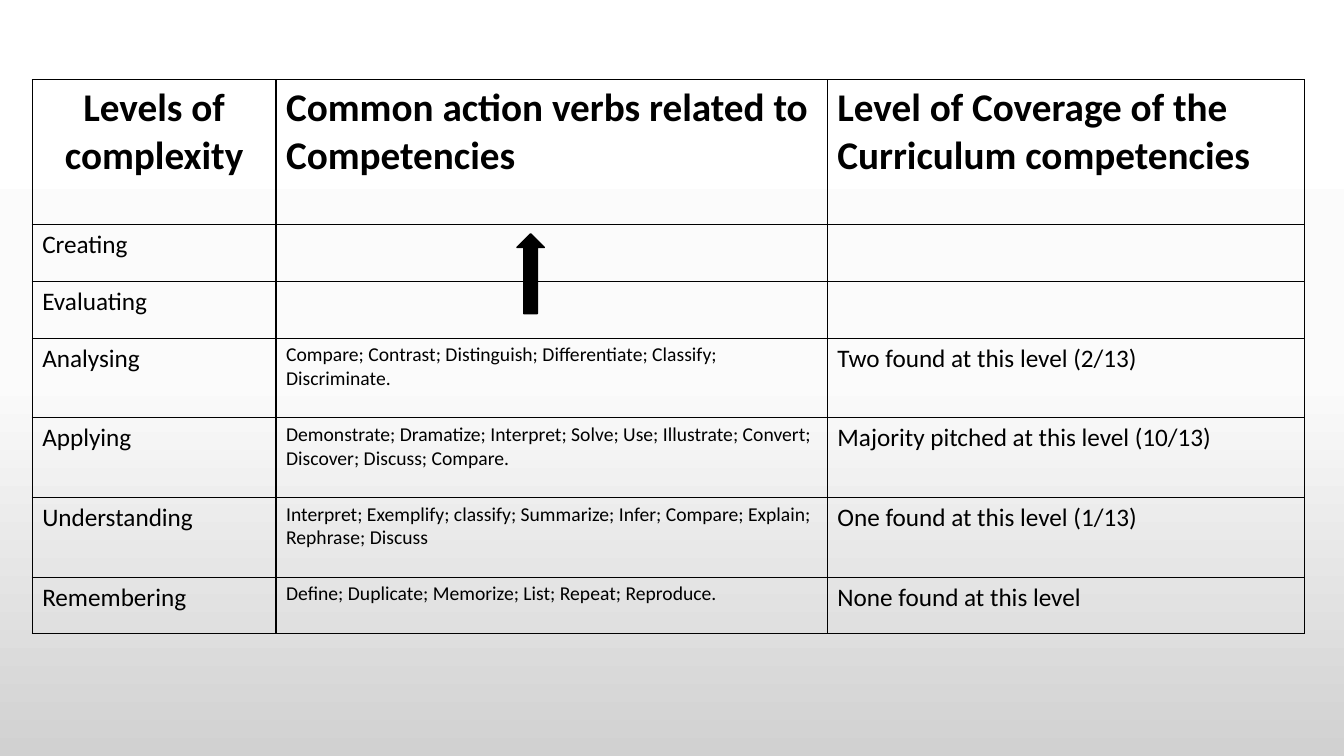
"""Builds the slide on levels of complexity and curriculum coverage."""
from copy import deepcopy
from lxml import etree
from pptx import Presentation
from pptx.dml.color import RGBColor
from pptx.enum import shapes, text
from pptx.oxml import ns
from pptx.util import Pt

BLACK = RGBColor(0, 0, 0)
WHITE = RGBColor(255, 255, 255)
PALE = RGBColor(0xFB, 0xFB, 0xFB)
GREY = RGBColor(0xD1, 0xD1, 0xD1)

WIDTHS = [174.2, 393.8, 340.6]
HEIGHTS = [103.7, 40.5, 40.5, 56.9, 56.9, 56.9, 40.5]
SIZES = [18, 14, 18]
ROWS = [
    ("Levels of complexity",
     "Common action verbs related to Competencies",
     "Level of Coverage of the Curriculum competencies"),
    ("Creating", "", ""),
    ("Evaluating", "", ""),
    ("Analysing",
     "Compare; Contrast; Distinguish; Differentiate; Classify; Discriminate.",
     "Two found at this level (2/13)"),
    ("Applying",
     "Demonstrate; Dramatize; Interpret; Solve; Use; Illustrate; Convert; Discover; Discuss; Compare.",
     "Majority pitched at this level (10/13)"),
    ("Understanding",
     "Interpret; Exemplify; classify; Summarize; Infer; Compare; Explain; Rephrase; Discuss",
     "One found at this level (1/13)"),
    ("Remembering",
     "Define; Duplicate; Memorize; List; Repeat; Reproduce.",
     "None found at this level"),
]


def border(cell):
    props = cell._tc.get_or_add_tcPr()
    for i, side in enumerate(("lnL", "lnR", "lnT", "lnB")):
        line = etree.Element(ns.qn("a:" + side), w=str(Pt(1)))
        fill = etree.SubElement(line, ns.qn("a:solidFill"))
        etree.SubElement(fill, ns.qn("a:srgbClr"), val=str(BLACK))
        props.insert(i, line)


deck = Presentation()
deck.slide_width, deck.slide_height = Pt(960), Pt(540)
slide = deck.slides.add_slide(deck.slide_layouts[6])

back = slide.background.fill
back.gradient()
back.gradient_angle = 270
stops = slide.element.xpath(".//a:gsLst")[0]
stops.insert(1, deepcopy(stops[0]))
for stop, place, color in zip(back.gradient_stops, (0, 0.5, 1), (WHITE, PALE, GREY)):
    stop.position = place
    stop.color.rgb = color

frame = slide.shapes.add_table(len(ROWS), len(WIDTHS), Pt(23), Pt(56.9),
                               Pt(sum(WIDTHS)), Pt(sum(HEIGHTS)))
table = frame.table
table.first_row = table.horz_banding = False
for col, width in zip(table.columns, WIDTHS):
    col.width = Pt(width)
for r, (row, height) in enumerate(zip(ROWS, HEIGHTS)):
    table.rows[r].height = Pt(height)
    for c, words in enumerate(row):
        cell = table.cell(r, c)
        cell.text = words
        cell.fill.background()
        border(cell)
        para = cell.text_frame.paragraphs[0]
        para.font.name = "Calibri"
        para.font.size = Pt(SIZES[c] if r else 28)
        para.font.bold = r == 0
        para.font.color.rgb = BLACK
table.cell(0, 0).text_frame.paragraphs[0].alignment = text.PP_ALIGN.CENTER

arrow = slide.shapes.add_shape(shapes.MSO_SHAPE.UP_ARROW, Pt(369.2), Pt(167), Pt(19.6), Pt(57))
arrow.shadow.inherit = False
arrow.fill.solid()
arrow.fill.fore_color.rgb = BLACK
arrow.line.color.rgb = BLACK
arrow.line.width = Pt(1)

deck.save("out.pptx")
